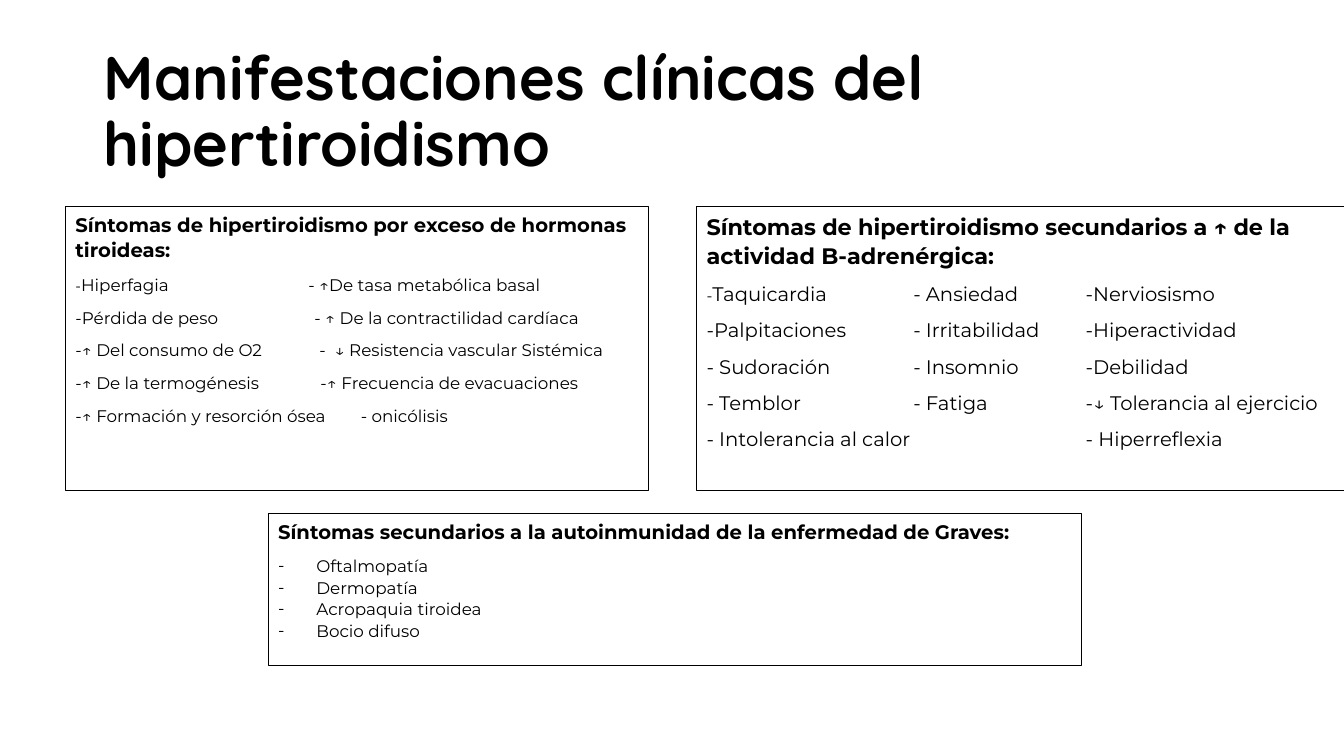
from pptx import Presentation
from pptx.dml.color import RGBColor
from pptx.enum import shapes, text
from pptx.oxml.ns import qn
from pptx.util import Inches, Pt
from lxml import etree

BLACK = RGBColor(0, 0, 0)
WHITE = RGBColor(255, 255, 255)

TITLE = "Manifestaciones clínicas del hipertiroidismo"
PANELS = [
    dict(at=(0.65, 2.05, 5.78, 2.82), head=14, size=12, dash=10.5,
         title="Síntomas de hipertiroidismo por exceso de hormonas tiroideas:",
         rows=[
             ("-Hiperfagia", {2.31: "- ↑De tasa metabólica basal"}),
             ("-Pérdida de peso", {2.37: "- ↑ De la contractilidad cardíaca"}),
             ("-↑ Del consumo de O2", {2.42: "-  ↓ Resistencia vascular Sistémica"}),
             ("-↑ De la termogénesis", {2.43: "-↑ Frecuencia de evacuaciones"}),
             ("-↑ Formación y resorción ósea", {2.83: "- onicólisis"}),
         ]),
    dict(at=(6.91, 2.05, 6.43, 2.82), head=16, size=14, dash=11,
         title="Síntomas de hipertiroidismo secundarios a ↑ de la actividad B-adrenérgica:",
         rows=[
             ("-Taquicardia", {2.05: "- Ansiedad", 3.76: "-Nerviosismo"}),
             ("-Palpitaciones", {2.05: "- Irritabilidad", 3.76: "-Hiperactividad"}),
             ("- Sudoración", {2.05: "- Insomnio", 3.76: "-Debilidad"}),
             ("- Temblor", {2.05: "- Fatiga", 3.76: "-↓ Tolerancia al ejercicio"}),
             ("- Intolerancia al calor", {3.76: "- Hiperreflexia"}),
         ]),
]
GRAVES = dict(at=(2.66, 5.09, 8.07, 1.51), head=14, size=12,
              title="Síntomas secundarios a la autoinmunidad de la enfermedad de Graves:",
              items=["Oftalmopatía", "Dermopatía", "Acropaquia tiroidea", "Bocio difuso"])


def style(run, size, bold=False, face="Montserrat"):
    """Set the font of one run."""
    run.font.name = face
    run.font.size = Pt(size)
    run.font.bold = bold
    run.font.color.rgb = BLACK


def space(para, after=8):
    """Align a paragraph left and set its spacing."""
    para.alignment = text.PP_ALIGN.LEFT
    para.line_spacing = 1.07
    para.space_after = Pt(after)


def add_box(slide, panel):
    """Draw a framed box with its heading and return its text frame."""
    box = slide.shapes.add_shape(shapes.MSO_SHAPE.RECTANGLE, *map(Inches, panel["at"]))
    box.shadow.inherit = False
    box.fill.solid()
    box.fill.fore_color.rgb = WHITE
    box.line.color.rgb = BLACK
    box.line.width = Pt(0.75)
    frame = box.text_frame
    frame.word_wrap = True
    frame.vertical_anchor = text.MSO_ANCHOR.TOP
    frame.text = panel["title"]
    space(frame.paragraphs[0])
    style(frame.paragraphs[0].runs[0], panel["head"], True)
    return frame


def add_row(frame, first, cells, size, dash):
    """Add one line whose columns stand at tab stops."""
    para = frame.add_paragraph()
    space(para)
    line = "\t".join([first, *cells.values()])
    for part, pts in ((line[0], dash), (line[1:], size)):
        run = para.add_run()
        run.text = part
        style(run, pts)
    tabs = etree.SubElement(para._p.get_or_add_pPr(), qn("a:tabLst"))
    for stop in cells:
        etree.SubElement(tabs, qn("a:tab"), pos=str(Inches(stop)), algn="l")


def add_item(frame, item, size):
    """Add one bulleted line."""
    para = frame.add_paragraph()
    para.text = item
    space(para, 0)
    style(para.runs[0], size)
    props = para._p.get_or_add_pPr()
    props.set("marL", str(Inches(0.38)))
    props.set("indent", str(Inches(-0.38)))
    etree.SubElement(props, qn("a:buFont"), typeface="Montserrat")
    etree.SubElement(props, qn("a:buChar"), char="-")


def main():
    """Build the slide and save it."""
    deck = Presentation()
    deck.slide_width, deck.slide_height = Inches(13.33), Inches(7.5)
    slide = deck.slides.add_slide(deck.slide_layouts[5])

    title = slide.shapes.title
    title.left, title.top, title.width, title.height = map(Inches, (0.93, 0.4, 11.49, 1.45))
    frame = title.text_frame
    frame.text = TITLE
    frame.word_wrap = True
    frame.auto_size = text.MSO_AUTO_SIZE.NONE
    frame.vertical_anchor = text.MSO_ANCHOR.MIDDLE
    para = frame.paragraphs[0]
    para.alignment = text.PP_ALIGN.LEFT
    para.line_spacing = 0.9
    style(para.runs[0], 44, True, "Quicksand")

    for panel in PANELS:
        frame = add_box(slide, panel)
        for i, (first, cells) in enumerate(panel["rows"]):
            add_row(frame, first, cells, panel["size"], panel["size"] if i else panel["dash"])

    frame = add_box(slide, GRAVES)
    for item in GRAVES["items"]:
        add_item(frame, item, GRAVES["size"])

    deck.save("out.pptx")


if __name__ == "__main__":
    main()
